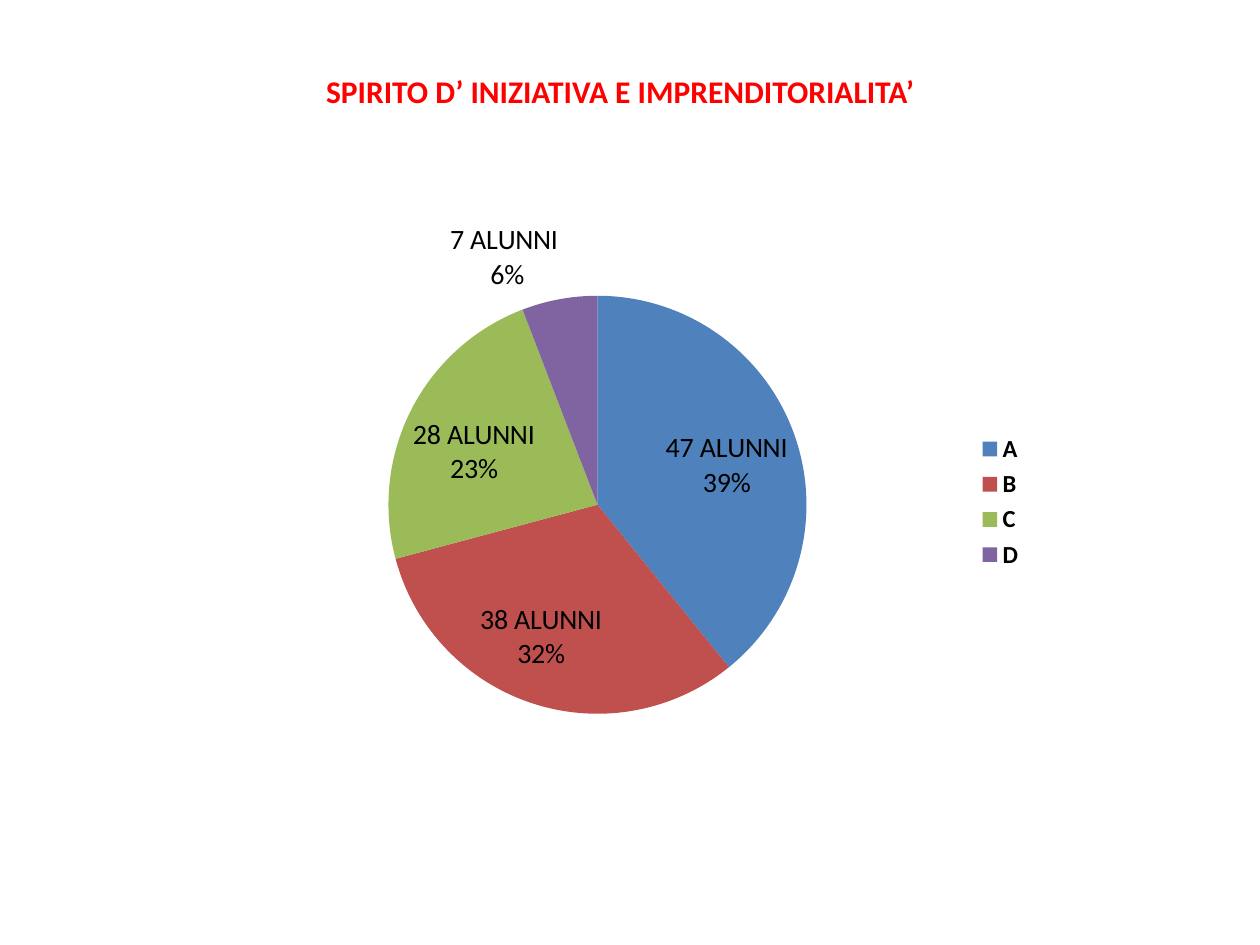
from pptx import Presentation
from pptx.chart.data import CategoryChartData
from pptx.dml.color import RGBColor
from pptx.enum import chart as ch, text
from pptx.oxml import parse_xml
from pptx.oxml.ns import nsdecls
from pptx.util import Pt

COLORS = {"title": "FF0000", "text": "000000",
          "A": "4F81BD", "B": "C0504D", "C": "9BBB59", "D": "8064A2"}
PUPILS = {"A": 47, "B": 38, "C": 28, "D": 7}
LABELS = ["47 ALUNNI 39%", "38 ALUNNI 32%", "28 ALUNNI 23%", "7 ALUNNI\n 6%"]
PLOT = {"x": 0.24, "y": 0.15, "w": 0.49, "h": 0.71}
LABEL_FORMAT = {"show_value": True, "show_percentage": True,
                "position": ch.XL_LABEL_POSITION.BEST_FIT}


def set_font(font, color, **values):
    font.color.rgb = RGBColor.from_string(COLORS[color])
    for name, value in {"name": "Calibri", **values}.items():
        setattr(font, name, value)


def add_title(s, box, title):
    tf = s.shapes.add_textbox(*map(Pt, box)).text_frame
    tf.word_wrap = True
    p = tf.paragraphs[0]
    p.alignment = text.PP_ALIGN.CENTER
    r = p.add_run()
    r.text = title
    set_font(r.font, "title", size=Pt(18), bold=True)


def place_plot(chart):
    plot_area = chart._chartSpace.chart.plotArea
    for old in plot_area.xpath("c:layout"):
        plot_area.remove(old)
    sizes = "".join(f'<c:{key} val="{value}"/>' for key, value in PLOT.items())
    plot_area.insert(0, parse_xml(
        f'<c:layout {nsdecls("c")}><c:manualLayout><c:layoutTarget val="inner"/>'
        f'<c:xMode val="edge"/><c:yMode val="edge"/>{sizes}'
        '</c:manualLayout></c:layout>'))


def add_pie(s, box, pupils, captions):
    data = CategoryChartData()
    data.categories = list(pupils)
    data.add_series("Series 1", list(pupils.values()))
    chart = s.shapes.add_chart(ch.XL_CHART_TYPE.PIE, *map(Pt, box), data).chart
    chart.has_title = False
    set_font(chart.font, "text", size=Pt(10))
    chart.has_legend = True
    chart.legend.position = ch.XL_LEGEND_POSITION.RIGHT
    chart.legend.include_in_layout = False
    set_font(chart.legend.font, "text", size=Pt(14), bold=True)
    place_plot(chart)

    plot = chart.plots[0]
    plot.vary_by_categories = True
    series = plot.series[0]
    set_font(series.data_labels.font, "text", size=Pt(16), bold=True)
    for name, value in LABEL_FORMAT.items():
        setattr(series.data_labels, name, value)
    for i, (grade, caption) in enumerate(zip(pupils, captions)):
        point = series.points[i]
        point.format.fill.solid()
        point.format.fill.fore_color.rgb = RGBColor.from_string(COLORS[grade])
        label = point.data_label
        tf = label.text_frame
        tf.text = caption
        tf.word_wrap = True
        for p in tf.paragraphs:
            set_font(p.runs[0].font, "text", size=Pt(16), bold=False)
        label.position = LABEL_FORMAT["position"]


def main():
    prs = Presentation()
    prs.slide_width, prs.slide_height = Pt(720), Pt(540)
    s = prs.slides.add_slide(prs.slide_layouts[6])
    add_title(s, (156, 37.5, 397, 29), "SPIRITO D’ INIZIATIVA E IMPRENDITORIALITA’")
    add_pie(s, (105, 116.8, 487.5, 340), PUPILS, LABELS)
    prs.save("out.pptx")


if __name__ == "__main__":
    main()
